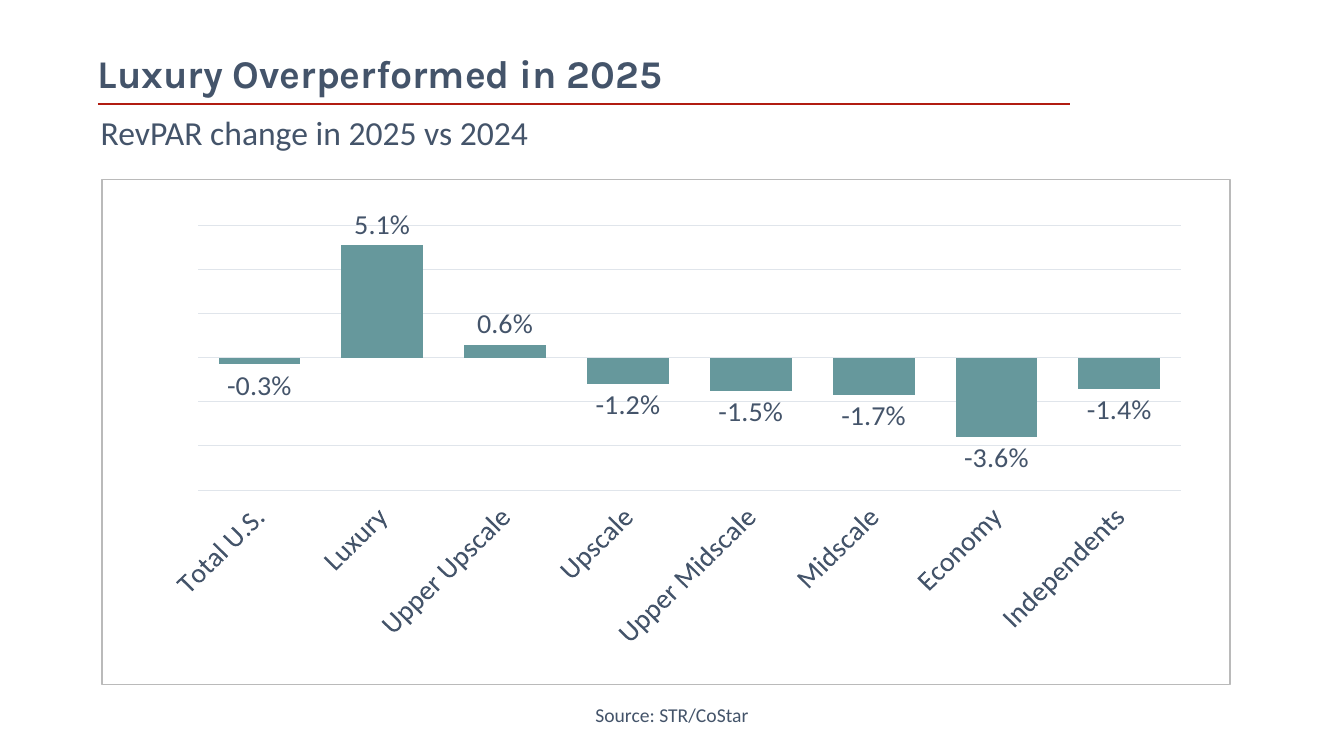
from pptx import Presentation
from pptx.chart.data import CategoryChartData
from pptx.dml.color import RGBColor
from pptx.enum.chart import (XL_CHART_TYPE, XL_LABEL_POSITION,
                             XL_TICK_LABEL_POSITION, XL_TICK_MARK)
from pptx.enum.shapes import MSO_CONNECTOR, MSO_SHAPE
from pptx.enum.text import MSO_ANCHOR, PP_ALIGN
from pptx.oxml.ns import qn
from pptx.util import Inches, Pt

COLUMN = XL_CHART_TYPE.COLUMN_CLUSTERED
OUTSIDE = XL_LABEL_POSITION.OUTSIDE_END
LOW = XL_TICK_LABEL_POSITION.LOW
NO_TICK = XL_TICK_MARK.NONE
STRAIGHT = MSO_CONNECTOR.STRAIGHT
RECT = MSO_SHAPE.RECTANGLE
TOP = MSO_ANCHOR.TOP
LEFT, CENTER = PP_ALIGN.LEFT, PP_ALIGN.CENTER

COLORS = {"text": "44546A", "rule": "B11C11", "frame": "BABABA",
          "grid": "E0E5EB", "bar": "66989C"}
BODY, HEAD = "Calibri", "Karla"

CHANGES = {"Total U.S.": -0.003, "Luxury": 0.051, "Upper Upscale": 0.006,
           "Upscale": -0.012, "Upper Midscale": -0.015, "Midscale": -0.017,
           "Economy": -0.036, "Independents": -0.014}


def color(name):
    return RGBColor.from_string(COLORS[name])


def inches(*box):
    return [Inches(n) for n in box]


def style_font(font, size, name=BODY, bold=False):
    font.size, font.name, font.bold = Pt(size), name, bold
    font.color.rgb = color("text")


def style_line(line, name, width):
    line.color.rgb = color(name)
    line.width = Pt(width)


def fill_text(shape, text, size, name=BODY, bold=False, align=LEFT):
    frame = shape.text_frame
    frame.word_wrap = True
    frame.vertical_anchor = TOP
    frame.text = text
    para = frame.paragraphs[0]
    para.alignment = align
    para.space_before = Pt(0)
    style_font(para.runs[0].font, size, name, bold)
    return frame


def add_head(slide, left, top, width, height):
    """Place the title, with its rule below."""
    title = slide.shapes.title
    title.left, title.top, title.width, title.height = inches(
        left, top, width, height)
    frame = fill_text(title, "Luxury Overperformed in 2025", 28, HEAD, True)
    frame.margin_left = Inches(0.16)
    frame.margin_top = frame.margin_right = frame.margin_bottom = Inches(0.1)
    frame.paragraphs[0].line_spacing = 1.25
    start, low = left + 0.16, top + 0.76
    rule = slide.shapes.add_connector(
        STRAIGHT, *inches(start, low, start + 9.64, low))
    style_line(rule.line, "rule", 1)
    props = rule._element.spPr
    props.append(props.makeelement(qn("a:effectLst"), {}))


def add_note(slide, box, text, size, align=LEFT):
    note = slide.shapes.add_textbox(*inches(*box))
    fill_text(note, text, size, align=align)


def add_panel(slide, left, top, width, height):
    """Draw the frame and the chart inside it."""
    frame = slide.shapes.add_shape(RECT, *inches(left, top, width, height))
    frame.shadow.inherit = False
    frame.fill.background()
    style_line(frame.line, "frame", 1)

    data = CategoryChartData()
    data.categories = list(CHANGES)
    data.add_series("RevPAR change", list(CHANGES.values()))
    chart = slide.shapes.add_chart(
        COLUMN, *inches(left + 0.46, top + 0.28, width - 0.74, height - 0.54),
        data).chart
    chart.has_title = chart.has_legend = False
    style_font(chart.font, 20)
    style_bars(chart.plots[0])
    style_axes(chart.category_axis, chart.value_axis)


def style_bars(plot):
    plot.gap_width, plot.overlap = 50, -27
    plot.vary_by_categories = False
    bars = plot.series[0]
    bars.invert_if_negative = False
    bars.format.fill.solid()
    bars.format.fill.fore_color.rgb = color("bar")
    labels = bars.data_labels
    labels.show_value = True
    labels.position = OUTSIDE
    labels.number_format = "0.0%"
    labels.number_format_is_linked = False
    style_font(labels.font, 20)


def style_axes(groups, scale):
    groups.tick_label_position = LOW
    groups.major_tick_mark = groups.minor_tick_mark = NO_TICK
    style_line(groups.format.line, "grid", 0.75)
    style_font(groups.tick_labels.font, 20)
    slant = groups._element.find(qn("c:txPr")).find(qn("a:bodyPr"))
    slant.set("rot", "-2700000")
    slant.set("vert", "horz")
    scale.minimum_scale, scale.maximum_scale = -0.06, 0.06
    scale.major_unit = 0.02
    scale.has_major_gridlines = True
    style_line(scale.major_gridlines.format.line, "grid", 0.75)
    scale.tick_labels.number_format = "0%"
    scale.tick_labels.number_format_is_linked = False
    scale.visible = False


def main():
    deck = Presentation()
    deck.slide_width, deck.slide_height = inches(13.33, 7.5)
    slide = deck.slides.add_slide(deck.slide_layouts[5])
    add_head(slide, 0.81, 0.27, 10.52, 0.76)
    add_note(slide, (0.9, 1.06, 10.89, 0.63),
             "RevPAR change in 2025 vs 2024", 24)
    add_panel(slide, 1.01, 1.78, 11.19, 5.01)
    add_note(slide, (3.96, 6.92, 5.41, 0.34), "Source: STR/CoStar", 14,
             CENTER)
    deck.save("out.pptx")


if __name__ == "__main__":
    main()
